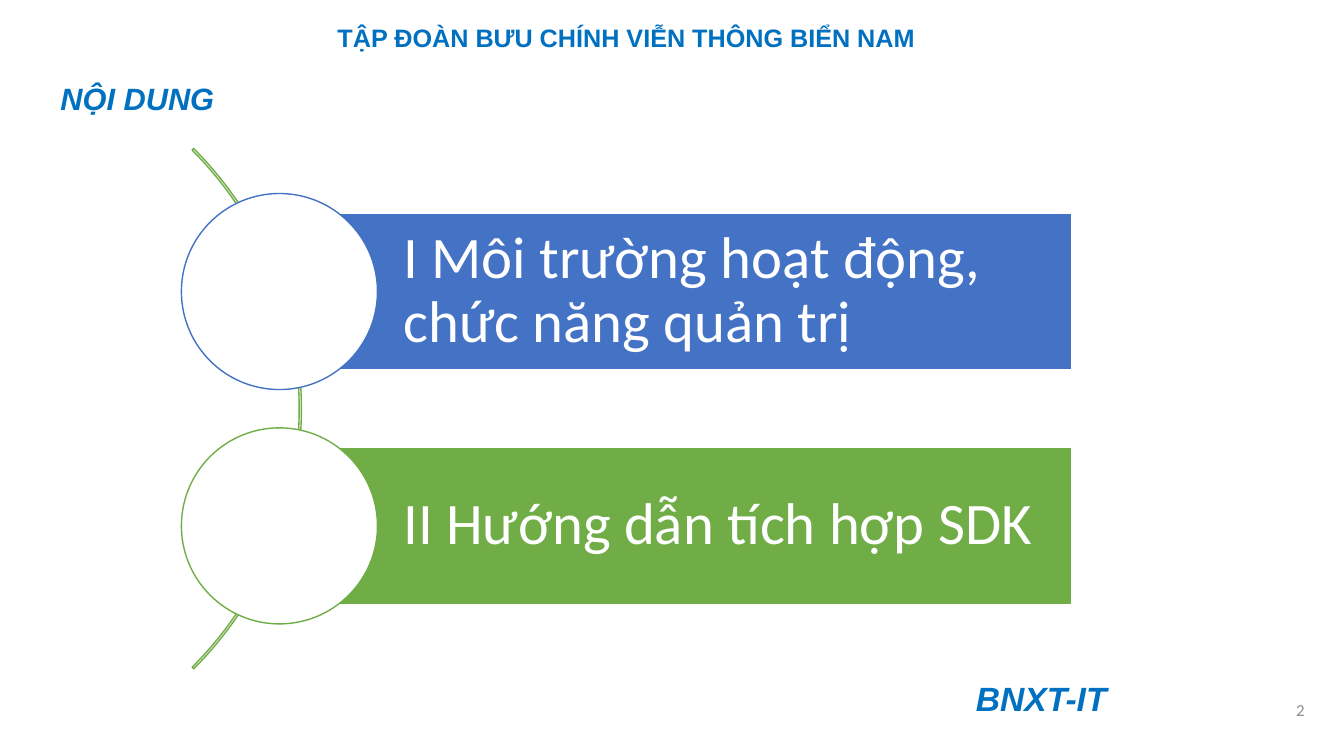
from collections import namedtuple

from pptx import Presentation
from pptx.dml.color import RGBColor
from pptx.enum.shapes import MSO_SHAPE as Preset
from pptx.enum.text import MSO_ANCHOR as Anchor, MSO_AUTO_SIZE as AutoSize, PP_ALIGN as Align
from pptx.util import Inches, Pt

WHITE = RGBColor(0xFF, 0xFF, 0xFF)
SKY = RGBColor(0x00, 0x70, 0xC0)
BLUE = RGBColor(0x44, 0x72, 0xC4)
GREEN = RGBColor(0x70, 0xAD, 0x47)
GRAY = RGBColor(0x8C, 0x8C, 0x8C)

CELL = Inches(0.1)
COLUMNS, ROWS = 133.33, 75
SECTIONS = [
    ("I Môi trường hoạt động, chức năng quản trị", BLUE),
    ("II Hướng dẫn tích hợp SDK", GREEN),
]

Box = namedtuple("Box", "left top width height")


def cells(box):
    return [round(length * CELL) for length in box]


def write(shape, text, size, color, font="Arial", bold=False, italic=False,
          align=Align.LEFT, anchor=Anchor.TOP, wrap=True, spacing=1.0,
          margins=(1, 0.5, 1, 0.5)):
    frame = shape.text_frame
    frame.auto_size = AutoSize.NONE
    frame.word_wrap = wrap
    frame.vertical_anchor = anchor
    (frame.margin_left, frame.margin_top,
     frame.margin_right, frame.margin_bottom) = cells(margins)
    para = frame.paragraphs[0]
    para.alignment = align
    para.line_spacing = spacing
    span = para.add_run()
    span.text = text
    span.font.name = font
    span.font.size = Pt(size)
    span.font.bold = bold
    span.font.italic = italic
    span.font.color.rgb = color


def add_label(page, box, text, size, color, **style):
    write(page.shapes.add_textbox(*cells(box)), text, size, color, **style)


def add_figure(page, preset, box, line, fill=None):
    shape = page.shapes.add_shape(preset, *cells(box))
    shape.shadow.inherit = False
    if fill is None:
        shape.fill.background()
    else:
        shape.fill.solid()
        shape.fill.fore_color.rgb = fill
    shape.line.color.rgb = line
    shape.line.width = Pt(1)
    return shape


def add_header(page, box):
    add_label(page, Box(box.left + 32.5, box.top + 1.7, 59.4, 4.1),
              "TẬP ĐOÀN BƯU CHÍNH VIỄN THÔNG BIỂN NAM", 18, SKY, bold=True, wrap=False)
    title = page.shapes.title
    title.left, title.top, title.width, title.height = cells(
        Box(box.left + 5, box.top + 7.4, 17.4, 4.7))
    write(title, "NỘI DUNG", 22, SKY, bold=True, italic=True, wrap=False)


def add_agenda(page, box):
    circle = 19.45
    bar = circle * 0.8
    arc = 73
    pitch = (box.height - circle) / (len(SECTIONS) - 1)
    curve = add_figure(page, Preset.BLOCK_ARC,
                       Box(box.left + 11.9 - arc, box.top + (box.height - arc) / 2, arc, arc),
                       GREEN)
    for index, value in enumerate((189, 27, 0.003)):
        curve.adjustments[index] = value
    for index, (text, color) in enumerate(SECTIONS):
        top = box.top + index * pitch
        panel = add_figure(page, Preset.RECTANGLE,
                           Box(box.left + circle / 2, top + (circle - bar) / 2,
                               box.width - circle / 2, bar), WHITE, color)
        write(panel, text, 42, WHITE, font="Calibri", anchor=Anchor.MIDDLE,
              spacing=0.9, margins=(12.3, 1.2, 1.2, 1.2))
        add_figure(page, Preset.OVAL, Box(box.left, top, circle, circle), color, WHITE)


def add_footer(page, box):
    add_label(page, Box(box.left + 94.2, box.top + 1.2, 36.2, 4), "2", 12, GRAY,
              font="Calibri", align=Align.RIGHT, anchor=Anchor.MIDDLE)
    add_label(page, Box(box.left + 90, box.top, 26.6, 5.8), "BNXT-IT", 24, SKY,
              bold=True, italic=True, align=Align.CENTER, spacing=0.9)


def main():
    deck = Presentation()
    deck.slide_width, deck.slide_height = cells((COLUMNS, ROWS))
    page = deck.slides.add_slide(deck.slide_layouts[5])
    add_header(page, Box(0, 0, COLUMNS, 12.1))
    add_agenda(page, Box(18, 19.2, 88.3, 42.7))
    add_footer(page, Box(0, 67.2, COLUMNS, 7.8))
    deck.save("out.pptx")


if __name__ == "__main__":
    main()
